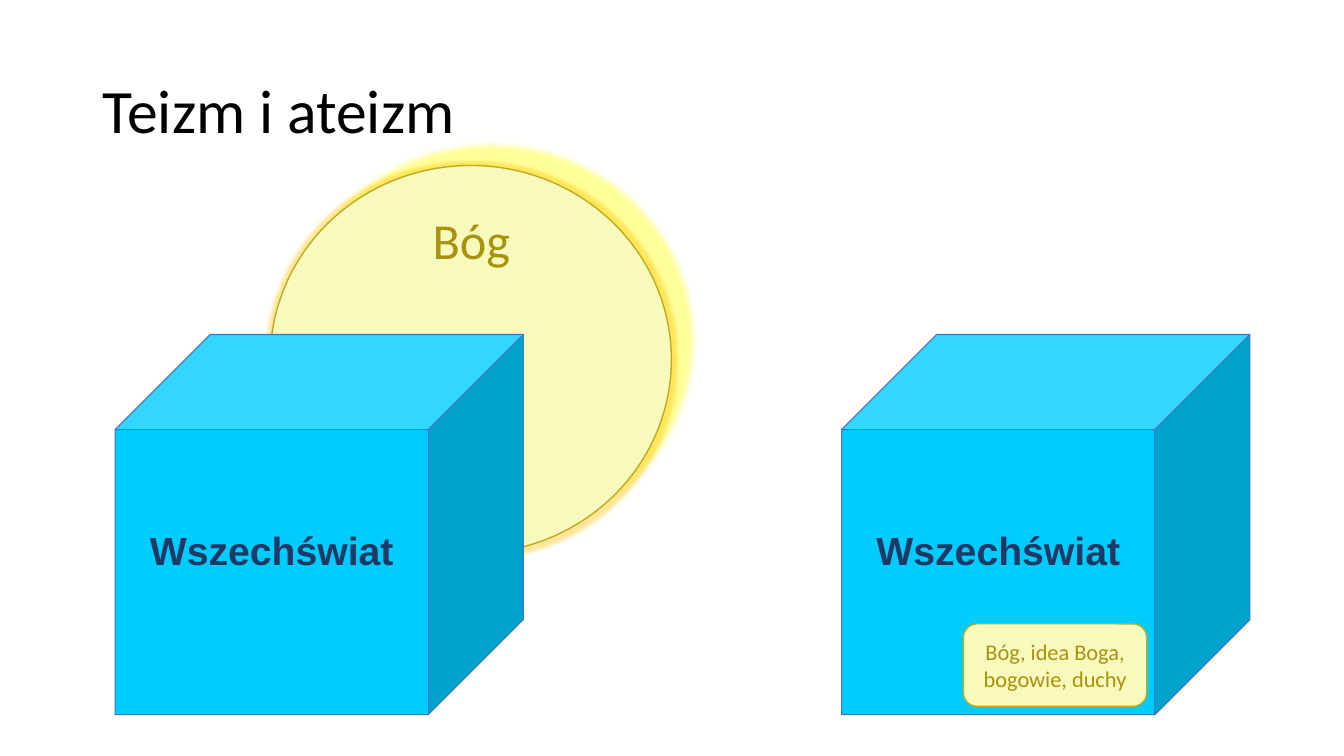
from dataclasses import dataclass

from lxml import etree
from pptx import Presentation
from pptx.dml.color import RGBColor
from pptx.enum.shapes import MSO_SHAPE
from pptx.enum.text import MSO_ANCHOR, PP_ALIGN
from pptx.oxml.ns import qn
from pptx.shapes.autoshape import Shape
from pptx.slide import Slide
from pptx.util import Cm, Pt

ELLIPSE, CUBE, ROUNDED = MSO_SHAPE.OVAL, MSO_SHAPE.CUBE, MSO_SHAPE.ROUNDED_RECTANGLE
TOP, MIDDLE = MSO_ANCHOR.TOP, MSO_ANCHOR.MIDDLE
LEFT, CENTER = PP_ALIGN.LEFT, PP_ALIGN.CENTER

BLACK = RGBColor(0x00, 0x00, 0x00)
CREAM = RGBColor(0xF8, 0xF9, 0xBC)
GOLD = RGBColor(0xBB, 0xAD, 0x1D)
DARK_GOLD = RGBColor(0xA9, 0x92, 0x0F)
SKY = RGBColor(0x00, 0xCC, 0xFF)
BLUE = RGBColor(0x44, 0x72, 0xC4)
NAVY = RGBColor(0x20, 0x38, 0x64)
YELLOW = RGBColor(0xFF, 0xFF, 0x00)
AMBER = RGBColor(0xFF, 0xC0, 0x00)


@dataclass(frozen=True)
class Area:
    """Left, top, width and height in centimetres."""
    left: float
    top: float
    width: float
    height: float

    def lengths(self) -> tuple[Cm, Cm, Cm, Cm]:
        return Cm(self.left), Cm(self.top), Cm(self.width), Cm(self.height)


@dataclass(frozen=True)
class Look:
    fill: RGBColor
    line: RGBColor
    line_width: float


@dataclass(frozen=True)
class Label:
    text: str
    size: float
    color: RGBColor
    font: str = "Calibri"
    bold: bool = False
    align: PP_ALIGN = CENTER
    anchor: MSO_ANCHOR = MIDDLE
    wrap: bool = True
    line_spacing: float = 1.0


DIVINE = Look(CREAM, GOLD, 1)
WORLD = Look(SKY, BLUE, 0.75)
UNIVERSE = Label("Wszechświat", 28, NAVY, font="Arial", bold=True, wrap=False)
UNIVERSE_LEFTS = (2.9, 21.21)


def write(box: Shape, label: Label) -> None:
    frame = box.text_frame
    frame.word_wrap = label.wrap
    frame.vertical_anchor = label.anchor
    para = frame.paragraphs[0]
    para.alignment = label.align
    para.line_spacing = label.line_spacing
    span = para.add_run()
    span.text = label.text
    span.font.name = label.font
    span.font.size = Pt(label.size)
    span.font.bold = label.bold
    span.font.color.rgb = label.color


def add_figure(page: Slide, kind: MSO_SHAPE, area: Area, look: Look) -> Shape:
    figure = page.shapes.add_shape(kind, *area.lengths())
    figure.shadow.inherit = False
    figure.fill.solid()
    figure.fill.fore_color.rgb = look.fill
    figure.line.color.rgb = look.line
    figure.line.width = Pt(look.line_width)
    return figure


def add_text(page: Slide, area: Area, label: Label) -> Shape:
    box = page.shapes.add_textbox(*area.lengths())
    write(box, label)
    return box


def add_effect(figure: Shape, tag: str, color: RGBColor, **settings: int) -> None:
    """Add a 40 % opaque glow or shadow to the figure's effect list."""
    effects = figure.element.spPr.find(qn("a:effectLst"))
    values = {name: str(value) for name, value in settings.items()}
    effect = etree.SubElement(effects, qn(tag), values)
    tint = etree.SubElement(effect, qn("a:srgbClr"), val=str(color))
    etree.SubElement(tint, qn("a:alpha"), val="40000")


def add_god(page: Slide) -> None:
    circle = add_figure(page, ELLIPSE, Area(6.81, 4.17, 10.11, 9.78), DIVINE)
    add_effect(circle, "a:glow", AMBER, rad=Pt(5))
    add_effect(circle, "a:outerShdw", YELLOW, blurRad=Pt(4), dist=Pt(20),
               dir=315 * 60000, algn="bl", rotWithShape=0)
    box = add_text(page, Area(8.31, 5.18, 7.14, 2.24),
                   Label("Bóg", 36, DARK_GOLD, anchor=TOP))
    frame = box.text_frame
    frame.margin_left = frame.margin_right = Cm(0.1)
    frame.margin_top = frame.margin_bottom = Cm(0.1)


def add_universe(page: Slide, left: float) -> None:
    cube = add_figure(page, CUBE, Area(left, 8.43, 10.29, 9.58), WORLD)
    cube.adjustments[0] = 0.25
    write(cube, UNIVERSE)
    # Lift the word above the middle of the front face
    cube.text_frame.margin_bottom = Cm(1.25)


def main() -> None:
    deck = Presentation()
    deck.slide_width, deck.slide_height = Cm(33.87), Cm(19.05)
    page = deck.slides.add_slide(deck.slide_layouts[6])

    # God behind the first universe
    add_god(page)
    for left in UNIVERSE_LEFTS:
        add_universe(page, left)

    # Ideas of God inside the second universe
    ideas = add_figure(page, ROUNDED, Area(24.28, 15.72, 4.62, 2.08), DIVINE)
    write(ideas, Label("Bóg, idea Boga, bogowie, duchy", 16, DARK_GOLD))

    # Title
    add_text(page, Area(2.34, 1.02, 29.21, 3.68),
             Label("Teizm i ateizm", 44, BLACK, align=LEFT, line_spacing=0.9))

    deck.save("out.pptx")


if __name__ == "__main__":
    main()
